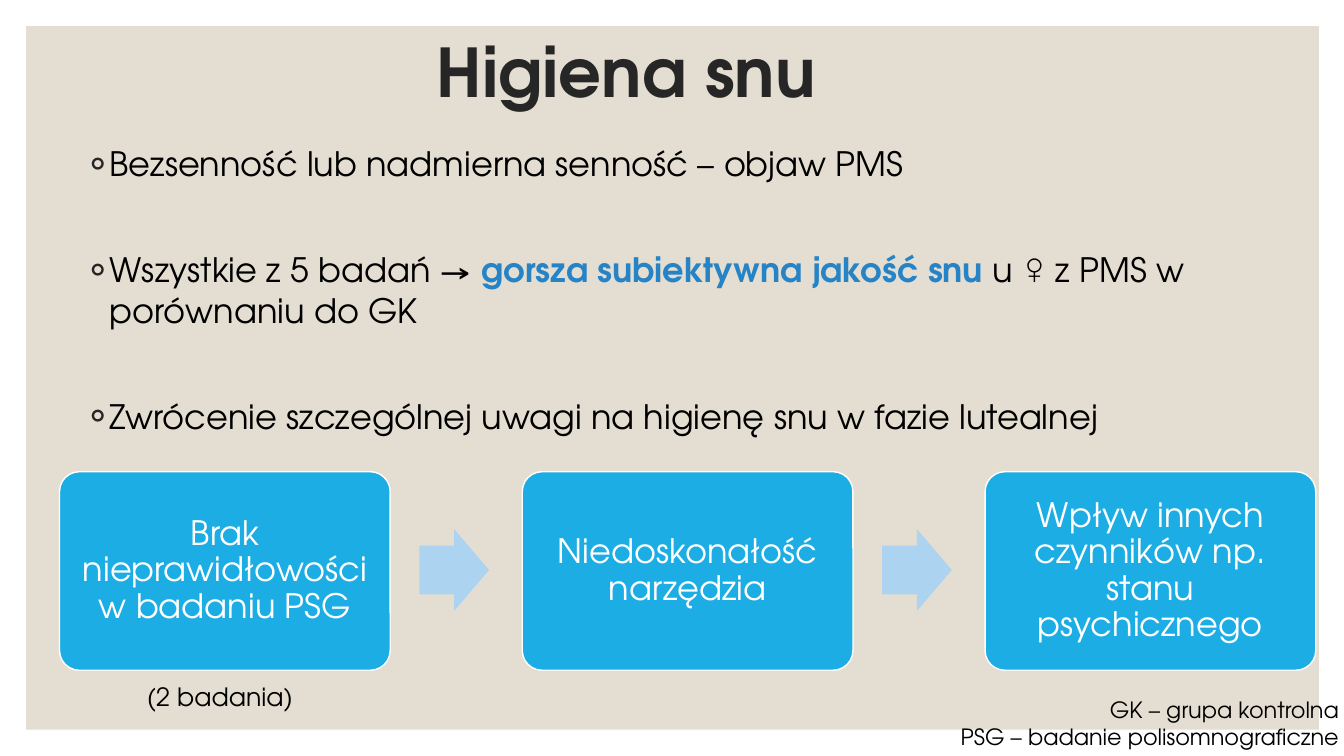
from lxml.etree import SubElement
from pptx import Presentation
from pptx.dml.color import RGBColor
from pptx.enum.shapes import MSO_SHAPE
from pptx.enum.text import MSO_ANCHOR, PP_ALIGN
from pptx.oxml.ns import qn
from pptx.util import Inches, Pt

FONT = "TeX Gyre Adventor"
WHITE = RGBColor(0xFF, 0xFF, 0xFF)
BLACK = RGBColor(0, 0, 0)
DARK = RGBColor(0x26, 0x26, 0x26)
BEIGE = RGBColor(0xE3, 0xDE, 0xD1)
BLUE = RGBColor(0x1C, 0xAD, 0xE4)
PALE_BLUE = RGBColor(0xAC, 0xD3, 0xEF)
ACCENT = RGBColor(0x26, 0x83, 0xC6)

BULLETS = [
    [("Bezsenność lub nadmierna senność – objaw PMS", False)],
    [("Wszystkie z 5 badań → ", False),
     ("gorsza subiektywna jakość snu ", True),
     ("u ♀ z PMS w porównaniu do GK", False)],
    [("Zwrócenie szczególnej uwagi na higienę snu w fazie lutealnej", False)],
]
STEPS = [
    "Brak nieprawidłowości w badaniu PSG",
    "Niedoskonałość narzędzia",
    "Wpływ innych czynników np. stanu psychicznego",
]
STEP_LEFT, STEP_PITCH, ARROW_OFFSET = 0.59, 4.59, 3.57


def set_attrs(target, values):
    for name, value in values.items():
        setattr(target, name, value)


def add_run(p, text, size, color, bold=False):
    r = p.add_run()
    r.text = text
    set_attrs(r.font, {"name": FONT, "size": Pt(size), "bold": bold})
    r.font.color.rgb = color


def add_panel(s, kind, box, fill, line=None, adjustments=()):
    sp = s.shapes.add_shape(kind, *map(Inches, box))
    sp.shadow.inherit = False
    sp.fill.solid()
    sp.fill.fore_color.rgb = fill
    if line is None:
        sp.line.fill.background()
    else:
        sp.line.color.rgb = line
        sp.line.width = Pt(1)
    for i, value in enumerate(adjustments):
        sp.adjustments[i] = value
    return sp


def add_text(s, box, lines, size, color=BLACK, bold=False, wrap=False, frame={}, para={}):
    tf = s.shapes.add_textbox(*map(Inches, box)).text_frame
    set_attrs(tf, {"word_wrap": wrap, **frame})
    for i, line in enumerate(lines):
        p = tf.add_paragraph() if i else tf.paragraphs[0]
        set_attrs(p, para)
        add_run(p, line, size, color, bold)


def add_bullet_mark(p):
    pPr = p._p.get_or_add_pPr()
    pPr.set("marL", str(Inches(0.2)))
    pPr.set("indent", str(Inches(-0.2)))
    SubElement(SubElement(pPr, qn("a:buClr")), qn("a:srgbClr"), val=str(DARK))
    SubElement(pPr, qn("a:buFont"), typeface=FONT)
    SubElement(pPr, qn("a:buChar"), char="◦")


def add_bullets(s, box, items):
    tf = s.shapes.add_textbox(*map(Inches, box)).text_frame
    tf.word_wrap = True
    for i, runs in enumerate(items):
        p = tf.add_paragraph() if i else tf.paragraphs[0]
        p.space_before = Pt(47 if i else 9)
        add_bullet_mark(p)
        for text, accented in runs:
            add_run(p, text, 24, ACCENT if accented else BLACK, accented)


def add_step(s, left, text):
    sp = add_panel(s, MSO_SHAPE.ROUNDED_RECTANGLE, (left, 4.68, 3.28, 1.97), BLUE, WHITE, [0.1])
    tf = sp.text_frame
    margins = {f"margin_{side}": Inches(0.1) for side in ("left", "top", "right", "bottom")}
    set_attrs(tf, {"word_wrap": True, "vertical_anchor": MSO_ANCHOR.MIDDLE, **margins})
    p = tf.paragraphs[0]
    set_attrs(p, {"alignment": PP_ALIGN.CENTER, "line_spacing": 0.9})
    add_run(p, text, 24, WHITE)


def main():
    prs = Presentation()
    set_attrs(prs, {"slide_width": Inches(13.33), "slide_height": Inches(7.5)})
    s = prs.slides.add_slide(prs.slide_layouts[6])

    add_panel(s, MSO_SHAPE.RECTANGLE, (0.26, 0.26, 12.82, 6.98), BEIGE)
    add_text(s, (4.23, 0, 11, 1.5), ["Higiena snu"], 48, DARK, bold=True, wrap=True,
             frame={"vertical_anchor": MSO_ANCHOR.MIDDLE}, para={"line_spacing": 0.9})
    add_bullets(s, (0.79, 1.37, 11.06, 3.2), BULLETS)
    add_text(s, (9.37, 6.86, 4.01, 0.64),
             ["GK – grupa kontrolna", "PSG – badanie polisomnograficzne"], 16,
             para={"alignment": PP_ALIGN.RIGHT})

    for i, text in enumerate(STEPS):
        left = STEP_LEFT + i * STEP_PITCH
        add_step(s, left, text)
        if i < len(STEPS) - 1:
            add_panel(s, MSO_SHAPE.RIGHT_ARROW, (left + ARROW_OFFSET, 5.25, 0.69, 0.81),
                      PALE_BLUE, adjustments=[0.6, 0.5])
    add_text(s, (1.36, 6.71, 1.66, 0.4), ["(2 badania)"], 18)

    prs.save("out.pptx")


if __name__ == "__main__":
    main()
